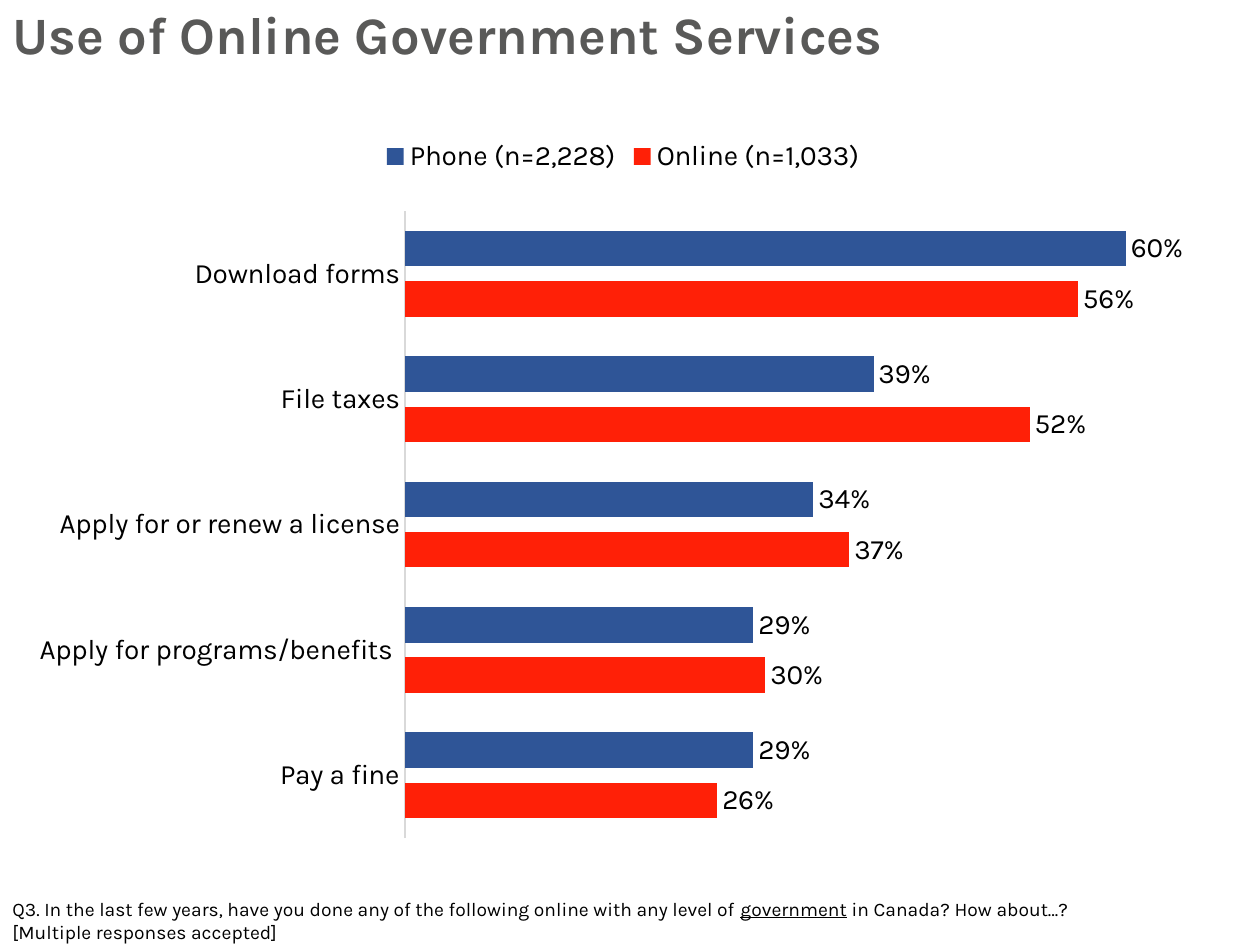
import lxml.etree
import pptx
import pptx.chart.data
import pptx.dml.color
import pptx.enum.chart
import pptx.enum.text
import pptx.oxml.ns
import pptx.util

Cm = pptx.util.Cm
Pt = pptx.util.Pt
qn = pptx.oxml.ns.qn

FONT = "Karla"
COLORS = {
    "title": "595958",
    "text": "000000",
    "axis": "D9D9D9",
    "online": "FF2007",
    "phone": "2F5597",
}
ACTIVITIES = [
    "Pay a fine",
    "Apply for programs/benefits ",
    "Apply for or renew a license",
    "File taxes",
    "Download forms",
]
SURVEYS = [
    ("Online (n=1,033)", "online", [0.26, 0.30, 0.37, 0.52, 0.56]),
    ("Phone (n=2,228)", "phone", [0.29, 0.29, 0.34, 0.39, 0.60]),
]
PLOT_AREA = {"x": 0.325, "y": 0.119, "w": 0.675, "h": 0.876}


def color(name):
    return pptx.dml.color.RGBColor.from_string(COLORS[name])


def set_font(font, size, fill="text", bold=False, underline=False):
    font.name = FONT
    font.size = Pt(size)
    font.bold = bold
    font.underline = underline
    font.color.rgb = color(fill)


def add_text(para, text, **style):
    span = para.add_run()
    span.text = text
    set_font(span.font, **style)


def add_text_box(page, left, top, width, height):
    box = page.shapes.add_textbox(Cm(left), Cm(top), Cm(width), Cm(height))
    box.text_frame.word_wrap = True
    return box.text_frame


def add_title(page, left, top, width, height):
    frame = add_text_box(page, left, top, width, height)
    frame.vertical_anchor = pptx.enum.text.MSO_ANCHOR.MIDDLE
    para = frame.paragraphs[0]
    para.line_spacing = 0.9
    add_text(para, "Use of Online Government Services", size=30, fill="title", bold=True)


def add_question(page, left, top, width, height):
    frame = add_text_box(page, left, top, width, height)
    para = frame.paragraphs[0]
    add_text(
        para,
        "Q3. In the last few years, have you done any of the following online with any level of ",
        size=11,
    )
    add_text(para, "government", size=11, underline=True)
    add_text(para, " in Canada? How about…?", size=11)
    add_text(frame.add_paragraph(), "[Multiple responses accepted]", size=11)


def place_plot_area(chart):
    plot_area = chart.plots[0]._element.getparent()
    for old in plot_area.findall(qn("c:layout")):
        plot_area.remove(old)
    layout = lxml.etree.Element(qn("c:layout"))
    manual = lxml.etree.SubElement(layout, qn("c:manualLayout"))
    settings = {"layoutTarget": "inner", "xMode": "edge", "yMode": "edge", **PLOT_AREA}
    for tag, value in settings.items():
        lxml.etree.SubElement(manual, qn(f"c:{tag}")).set("val", str(value))
    plot_area.insert(0, layout)


def format_axes(chart):
    no_marks = pptx.enum.chart.XL_TICK_MARK.NONE
    activities = chart.category_axis
    activities.major_tick_mark = no_marks
    activities.minor_tick_mark = no_marks
    activities.has_major_gridlines = False
    activities.format.line.color.rgb = color("axis")
    activities.format.line.width = Pt(0.75)
    set_font(activities.tick_labels.font, size=16)
    shares = chart.value_axis
    shares.visible = False
    shares.has_major_gridlines = False
    shares.minimum_scale = 0
    shares.maximum_scale = 0.7


def format_series(series, fill):
    series.format.fill.solid()
    series.format.fill.fore_color.rgb = color(fill)
    series.invert_if_negative = False
    labels = series.data_labels
    labels.show_value = True
    labels.number_format = "0%"
    labels.number_format_is_linked = False
    labels.position = pptx.enum.chart.XL_LABEL_POSITION.OUTSIDE_END
    set_font(labels.font, size=16)


def add_usage_chart(page, left, top, width, height):
    data = pptx.chart.data.CategoryChartData(number_format="0%")
    data.categories = ACTIVITIES
    for name, fill, shares in SURVEYS:
        data.add_series(name, shares)
    chart = page.shapes.add_chart(
        pptx.enum.chart.XL_CHART_TYPE.BAR_CLUSTERED,
        Cm(left), Cm(top), Cm(width), Cm(height), data,
    ).chart
    chart.has_title = False
    set_font(chart.font, size=16)
    chart.has_legend = True
    chart.legend.position = pptx.enum.chart.XL_LEGEND_POSITION.TOP
    chart.legend.include_in_layout = False
    set_font(chart.legend.font, size=16)
    bars = chart.plots[0]
    bars.vary_by_categories = False
    bars.gap_width = 112
    bars.overlap = -42
    for series, (name, fill, shares) in zip(bars.series, SURVEYS):
        format_series(series, fill)
    format_axes(chart)
    place_plot_area(chart)


def main():
    deck = pptx.Presentation()
    deck.slide_width = Cm(25.4)
    deck.slide_height = Cm(19.05)
    page = deck.slides.add_slide(deck.slide_layouts[6])
    add_question(page, 0, 17.96, 25.4, 1.24)
    add_title(page, 0, 0.08, 25.4, 1.35)
    add_usage_chart(page, 0, 2.54, 25.12, 14.43)
    deck.save("out.pptx")


if __name__ == "__main__":
    main()
